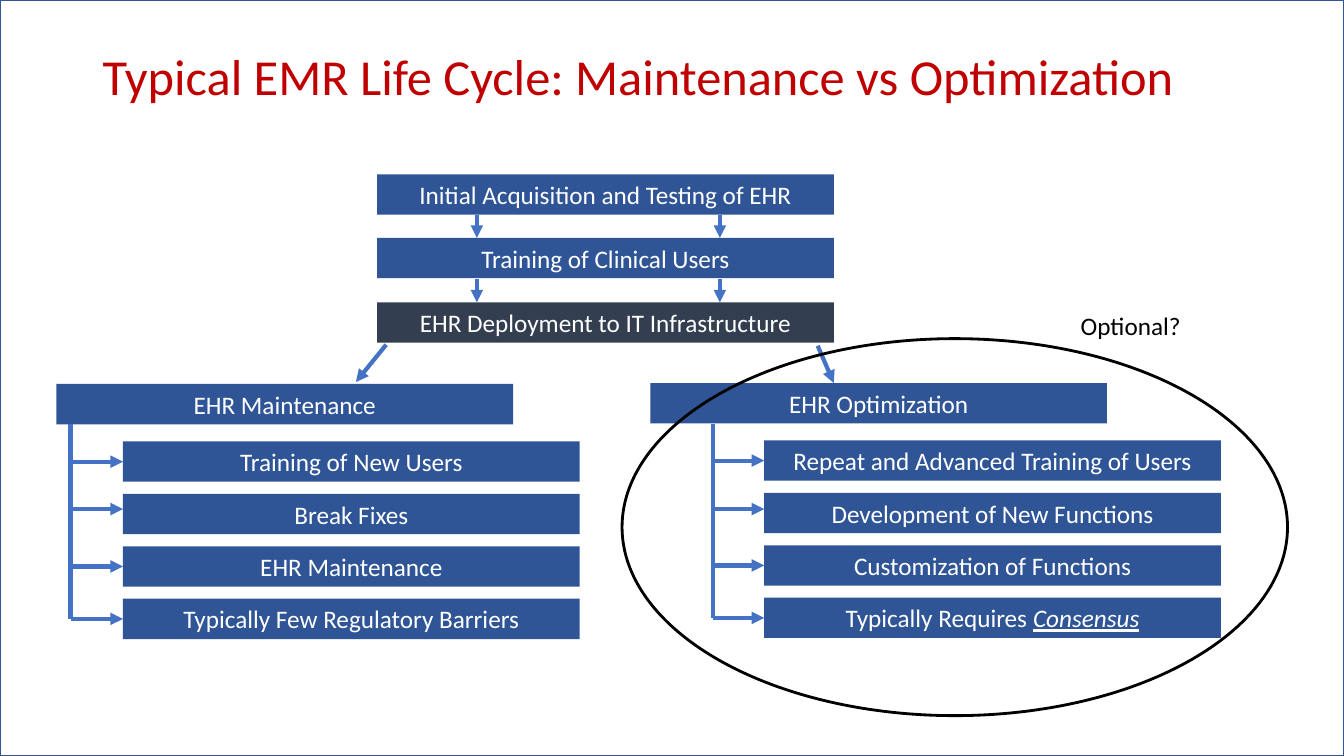
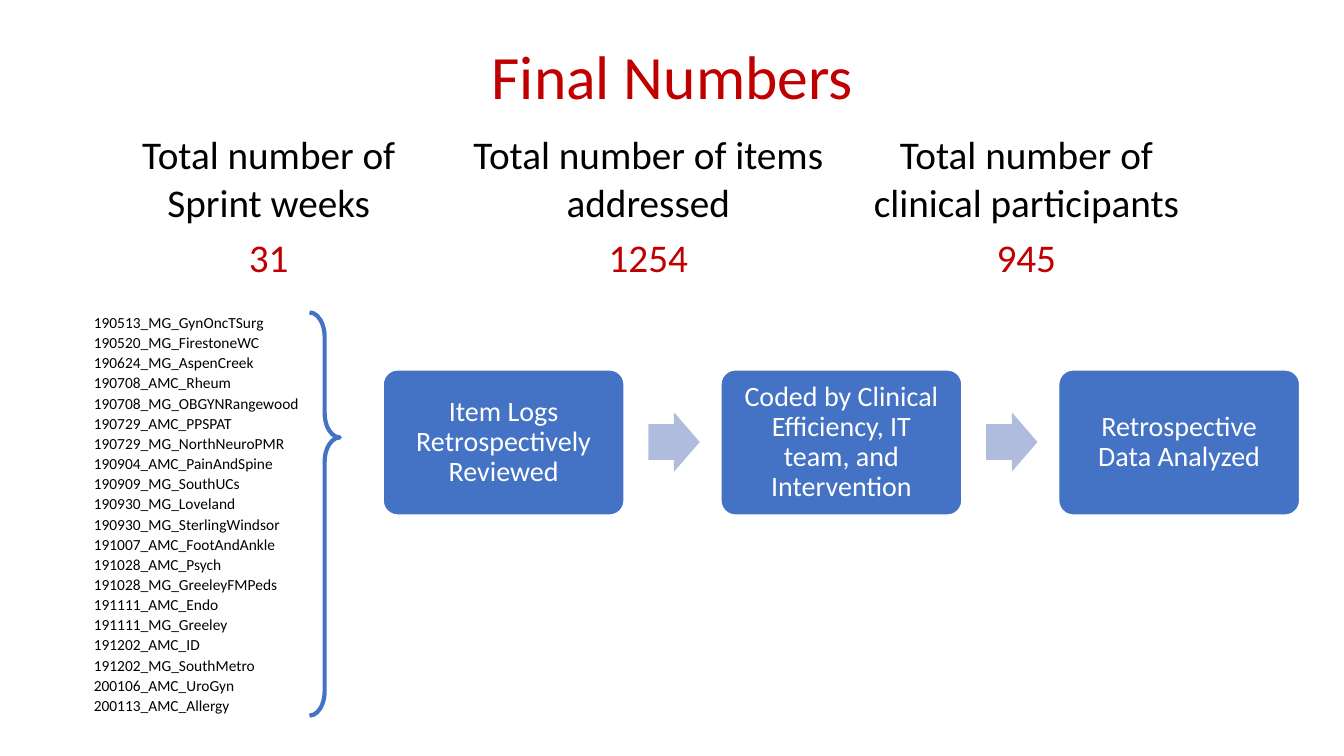
"""Builds two slides: the EMR life cycle chart and the final numbers."""
from pptx import Presentation
from pptx import util as u
from pptx.dml.color import RGBColor
from pptx.enum import shapes, text
from pptx.oxml import ns, xmlchemy

FONT = "Calibri"
RED = RGBColor(0xC0, 0x00, 0x00)
NAVY = RGBColor(0x2F, 0x55, 0x97)
SLATE = RGBColor(0x33, 0x3F, 0x50)
BLUE = RGBColor(0x44, 0x72, 0xC4)
FRAME = RGBColor(0x32, 0x54, 0x91)
PALE = RGBColor(0xB0, 0xBC, 0xDE)
BLACK = RGBColor(0x00, 0x00, 0x00)
WHITE = RGBColor(0xFF, 0xFF, 0xFF)
LEFT, CENTER = text.PP_ALIGN.LEFT, text.PP_ALIGN.CENTER
BAR_WIDTH, BAR_HEIGHT = 4.53, 0.4

SUMMARY = [
    ("Total number of Sprint weeks", "31"),
    ("Total number of items addressed", "1254"),
    ("Total number of clinical participants", "945"),
]
SPRINTS = [
    "190513_MG_GynOncTSurg", "190520_MG_FirestoneWC", "190624_MG_AspenCreek",
    "190708_AMC_Rheum", "190708_MG_OBGYNRangewood", "190729_AMC_PPSPAT",
    "190729_MG_NorthNeuroPMR", "190904_AMC_PainAndSpine", "190909_MG_SouthUCs",
    "190930_MG_Loveland", "190930_MG_SterlingWindsor", "191007_AMC_FootAndAnkle",
    "191028_AMC_Psych", "191028_MG_GreeleyFMPeds", "191111_AMC_Endo",
    "191111_MG_Greeley", "191202_AMC_ID", "191202_MG_SouthMetro",
    "200106_AMC_UroGyn", "200113_AMC_Allergy",
]
STEPS = [
    "Item Logs Retrospectively Reviewed",
    "Coded by Clinical Efficiency, IT team, and Intervention",
    "Retrospective Data Analyzed",
]


def write(frame, words, size, color, align=LEFT, accent=""):
    para = frame.paragraphs[0]
    para.alignment = align
    para.font.name, para.font.size = FONT, u.Pt(size)
    para.font.color.rgb = color
    para.add_run().text = words
    if accent:
        span = para.add_run()
        span.text = accent
        span.font.italic = span.font.underline = True
    return para


def add_text(page, place, words, size, color, align=LEFT):
    frame = page.shapes.add_textbox(*map(u.Inches, place)).text_frame
    frame.word_wrap = True
    frame.vertical_anchor = text.MSO_ANCHOR.MIDDLE
    return write(frame, words, size, color, align)


def add_title(page, words, size, align=LEFT):
    add_text(page, (0.92, 0.4, 11.5, 0.77), words, size, RED, align).line_spacing = 0.9


def add_box(page, kind, place, fill=None, line=None, width=1):
    box = page.shapes.add_shape(kind, *map(u.Inches, place))
    box.shadow.inherit = False
    if fill is None:
        box.fill.background()
    else:
        box.fill.solid()
        box.fill.fore_color.rgb = fill
    if line is None:
        box.line.fill.background()
    else:
        box.line.color.rgb = line
        box.line.width = u.Pt(width)
    return box


def add_bar(page, left, top, words, fill=NAVY, accent=""):
    place = (left, top, BAR_WIDTH, BAR_HEIGHT)
    bar = add_box(page, shapes.MSO_SHAPE.RECTANGLE, place, fill)
    write(bar.text_frame, words, 18, WHITE, CENTER, accent)
    return bar


def add_line(page, start, end, arrow=True):
    ends = map(u.Inches, (*start, *end))
    line = page.shapes.add_connector(shapes.MSO_CONNECTOR.STRAIGHT, *ends)
    line.line.color.rgb = BLUE
    line.line.width = u.Pt(3)
    if arrow:
        tail = xmlchemy.OxmlElement("a:tailEnd")
        tail.set("type", "triangle")
        line.line._get_or_add_ln().append(tail)
    properties = line._element.find(ns.qn("p:spPr"))
    properties.append(xmlchemy.OxmlElement("a:effectLst"))
    return line


def add_branch(page, head, trunk, left, first_top, items, accent=""):
    add_bar(page, *head)
    tops = [first_top + 0.52 * row for row in range(len(items))]
    add_line(page, (trunk, 4.21), (trunk, tops[-1] + BAR_HEIGHT / 2), arrow=False)
    for row, (top, words) in enumerate(zip(tops, items)):
        last = row == len(items) - 1
        bar = add_bar(page, left, top, words, accent=accent if last else "")
        raised = row == 1
        height = 5.05 if raised else top + BAR_HEIGHT / 2
        arrow = add_line(page, (trunk, height), (left, height))
        if not raised:
            arrow.end_connect(bar, 1)


def add_table(page, place, rows, widths, heights, size, colors, align, fill=None):
    frame = page.shapes.add_table(len(rows), len(widths), *map(u.Inches, place))
    table = frame.table
    table.first_row = table.horz_banding = False
    for column, width in zip(table.columns, widths):
        column.width = u.Inches(width)
    for row, height, color, entries in zip(table.rows, heights, colors, rows):
        row.height = u.Inches(height)
        for cell, words in zip(row.cells, entries):
            cell.margin_left = cell.margin_right = cell.margin_top = u.Inches(0.01)
            cell.margin_bottom = 0
            cell.vertical_anchor = text.MSO_ANCHOR.BOTTOM
            if fill is None:
                cell.fill.background()
            else:
                cell.fill.solid()
                cell.fill.fore_color.rgb = fill
            write(cell.text_frame, words, size, color, align)


def add_step(page, left, words):
    place = (left, 3.67, 2.39, 1.44)
    box = add_box(page, shapes.MSO_SHAPE.ROUNDED_RECTANGLE, place, BLUE, WHITE)
    box.adjustments[0] = 0.1
    frame = box.text_frame
    frame.margin_left = frame.margin_right = u.Inches(0.12)
    write(frame, words, 20, WHITE, CENTER).line_spacing = 0.9


def build_life_cycle(page):
    add_box(page, shapes.MSO_SHAPE.RECTANGLE, (0, 0, 13.33, 7.5), WHITE, FRAME)
    add_title(page, "Typical EMR Life Cycle: Maintenance vs Optimization", 36)
    add_bar(page, 3.74, 1.73, "Initial Acquisition and Testing of EHR")
    add_bar(page, 3.74, 2.36, "Training of Clinical Users")
    add_bar(page, 3.74, 3, "EHR Deployment to IT Infrastructure", SLATE)
    for top in (2.13, 2.77):
        for left in (4.73, 7.14):
            add_line(page, (left, top), (left, top + 0.23))
    add_line(page, (3.83, 3.42), (3.53, 3.79))
    add_line(page, (8.11, 3.43), (8.27, 3.8))
    add_branch(page, (0.56, 3.81, "EHR Maintenance"), 0.7, 1.22, 4.38, [
        "Training of New Users", "Break Fixes", "EHR Maintenance",
        "Typically Few Regulatory Barriers"])
    add_branch(page, (6.45, 3.8, "EHR Optimization"), 7.07, 7.58, 4.37, [
        "Repeat and Advanced Training of Users", "Development of New Functions",
        "Customization of Functions", "Typically Requires "], "Consensus")
    add_text(page, (10.62, 3.03, 2.12, 0.4), "Optional?", 18, BLACK)
    add_box(page, shapes.MSO_SHAPE.OVAL, (6.17, 3.36, 6.6, 3.74), line=BLACK, width=2)


def build_final_numbers(page):
    add_title(page, "Final Numbers", 44, CENTER)
    add_table(page, (0.92, 1.17, 11, 1.65), list(zip(*SUMMARY)), (3.49, 4.04, 3.46),
              (1.09, 0.55), 28, (BLACK, RED), CENTER)
    count = len(SPRINTS)
    add_table(page, (0.92, 3.1, 2.15, 4), [[name] for name in SPRINTS], [2.15],
              [0.2] * count, 11, [BLACK] * count, LEFT, WHITE)
    brace = add_box(page, shapes.MSO_SHAPE.RIGHT_BRACE, (3.07, 3.1, 0.3, 4), WHITE, BLUE, 3)
    brace.adjustments[0], brace.adjustments[1] = 0.81, 0.31
    for index, words in enumerate(STEPS):
        left = 3.8 + 3.35 * index
        add_step(page, left, words)
        if index < len(STEPS) - 1:
            place = (left + 2.63, 4.09, 0.51, 0.59)
            arrow = add_box(page, shapes.MSO_SHAPE.RIGHT_ARROW, place, PALE)
            arrow.adjustments[0] = 0.6


def main():
    deck = Presentation()
    deck.slide_width, deck.slide_height = u.Inches(13.33), u.Inches(7.5)
    for build in (build_life_cycle, build_final_numbers):
        build(deck.slides.add_slide(deck.slide_layouts[6]))
    deck.save("out.pptx")


if __name__ == "__main__":
    main()
